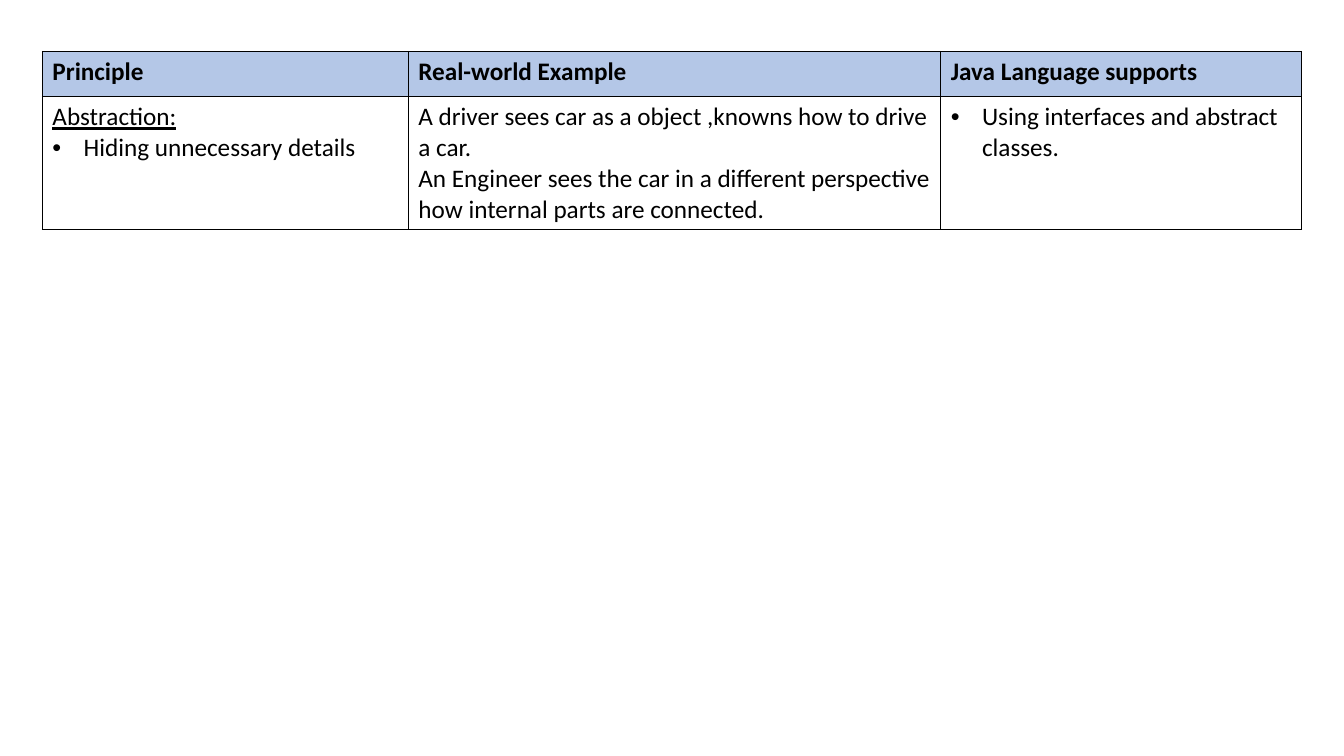
from lxml import etree
from pptx import Presentation
from pptx.dml.color import RGBColor
from pptx.oxml import ns
from pptx.util import Inches, Pt

BLACK = RGBColor(0x00, 0x00, 0x00)
HEADER_BLUE = RGBColor(0xB4, 0xC7, 0xE7)

COLUMN_WIDTHS = [3.63, 5.28, 3.58]
ROW_HEIGHTS = [0.45, 1.3]
# Each cell is a list of paragraphs: text and its format.
ROWS = [
    [
        [("Principle", {"bold": True})],
        [("Real-world Example", {"bold": True})],
        [("Java Language supports", {"bold": True})],
    ],
    [
        [("Abstraction:", {"underline": True}),
         ("Hiding unnecessary details", {"bullet": True})],
        [("A driver sees car as a object ,knowns how to drive a car.", {}),
         ("An Engineer sees the car in a different perspective "
          "how internal parts are connected.", {})],
        [("Using interfaces and abstract classes.", {"bullet": True})],
    ],
]


def write_paragraph(paragraph, text, bold=False, underline=False, bullet=False):
    if bullet:
        properties = paragraph._p.get_or_add_pPr()
        properties.set("marL", str(Inches(0.31)))
        properties.set("indent", str(-Inches(0.31)))
        etree.SubElement(properties, ns.qn("a:buFont"), typeface="Arial")
        etree.SubElement(properties, ns.qn("a:buChar"), char="•")
    run = paragraph.add_run()
    run.text = text
    run.font.name = "Calibri"
    run.font.size = Pt(18)
    run.font.bold = bold
    run.font.underline = underline
    run.font.color.rgb = BLACK


def add_borders(cell):
    properties = cell._tc.get_or_add_tcPr()
    for side in ("lnL", "lnR", "lnT", "lnB"):
        line = etree.SubElement(properties, ns.qn(f"a:{side}"), w=str(Pt(1)))
        fill = etree.SubElement(line, ns.qn("a:solidFill"))
        etree.SubElement(fill, ns.qn("a:srgbClr"), val=str(BLACK))


presentation = Presentation()
presentation.slide_width = Inches(13.33)
presentation.slide_height = Inches(7.5)
slide = presentation.slides.add_slide(presentation.slide_layouts[6])

table = slide.shapes.add_table(
    len(ROWS), len(COLUMN_WIDTHS), Inches(0.42), Inches(0.51),
    Inches(sum(COLUMN_WIDTHS)), Inches(sum(ROW_HEIGHTS))).table
table.horz_banding = False
for column, width in zip(table.columns, COLUMN_WIDTHS):
    column.width = Inches(width)
for row, height in zip(table.rows, ROW_HEIGHTS):
    row.height = Inches(height)

for row_index, row_content in enumerate(ROWS):
    for column_index, paragraphs in enumerate(row_content):
        cell = table.cell(row_index, column_index)
        add_borders(cell)
        if row_index == 0:
            cell.fill.solid()
            cell.fill.fore_color.rgb = HEADER_BLUE
        else:
            cell.fill.background()
        frame = cell.text_frame
        for index, (content, style) in enumerate(paragraphs):
            paragraph = frame.add_paragraph() if index else frame.paragraphs[0]
            write_paragraph(paragraph, content, **style)

presentation.save("out.pptx")
